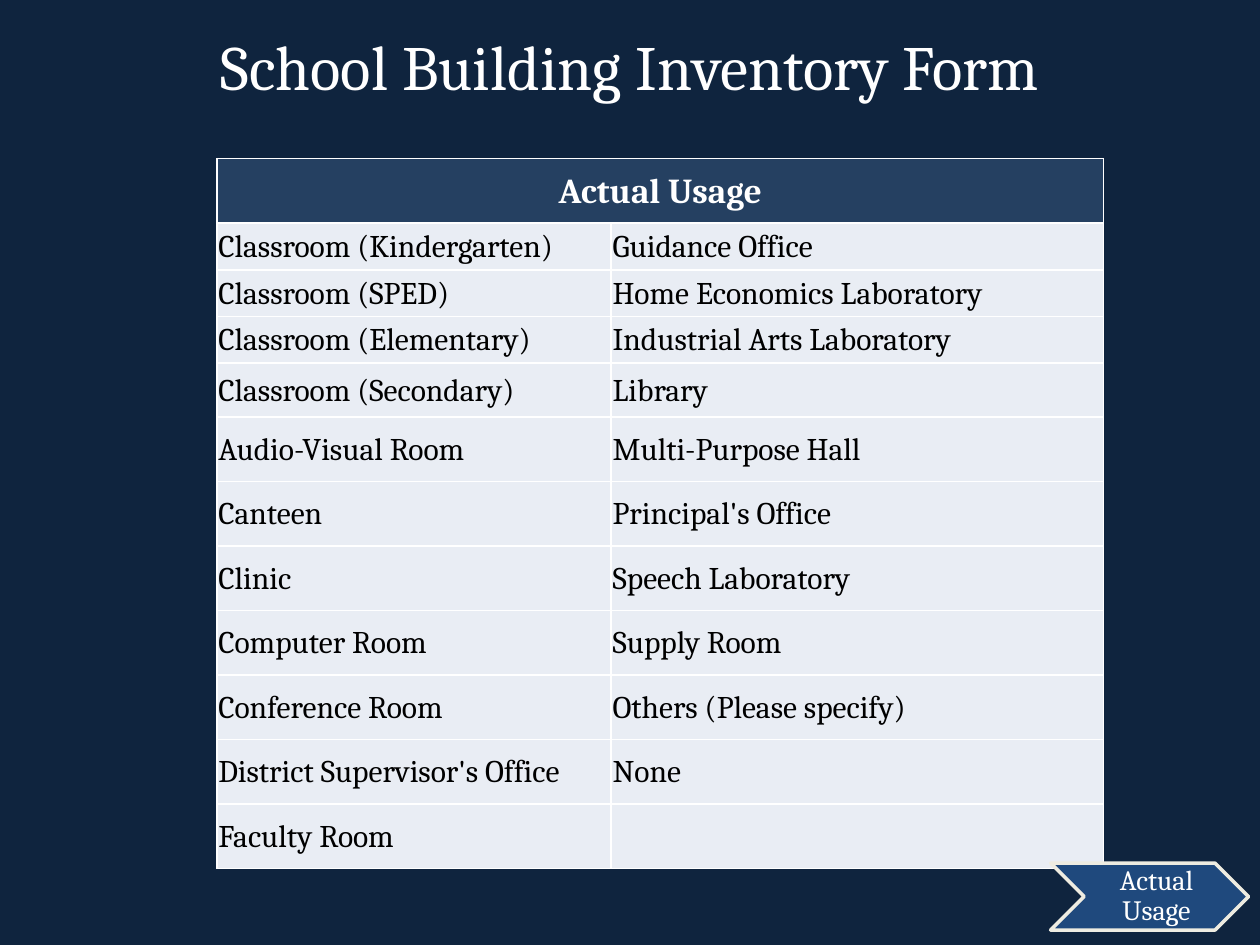
from lxml.etree import SubElement
from pptx import Presentation
from pptx.dml.color import RGBColor
from pptx.enum.shapes import MSO_SHAPE
from pptx.enum.text import MSO_ANCHOR, PP_ALIGN
from pptx.oxml.ns import qn
from pptx.util import Cm, Pt

NAVY, HEADER, ROW, WHITE, BLACK = "0F243E", "254061", "E9EDF4", "FFFFFF", "000000"
CHEVRON, CREAM = "1F497D", "EEECE1"

HEADING = {"size": Pt(36), "bold": False}
HEADER_TEXT = {"size": Pt(20), "bold": True}
ROW_TEXT = {"size": Pt(18), "bold": False}
TAG_TEXT = {"size": Pt(16), "bold": False}

USAGES = [
    ("Classroom (Kindergarten)", "Guidance Office"),
    ("Classroom (SPED)", "Home Economics Laboratory"),
    ("Classroom (Elementary)", "Industrial Arts Laboratory"),
    ("Classroom (Secondary)", "Library"),
    ("Audio-Visual Room", "Multi-Purpose Hall"),
    ("Canteen", "Principal's Office"),
    ("Clinic", "Speech Laboratory"),
    ("Computer Room", "Supply Room"),
    ("Conference Room", "Others (Please specify)"),
    ("District Supervisor's Office", "None"),
    ("Faculty Room", ""),
]
COLUMN_WIDTHS = [7.95, 9.93]
ROW_HEIGHTS = [1.3] + [0.94] * 3 + [1.09] + [1.3] * 7


def paint(color_format, color):
    color_format.rgb = RGBColor.from_string(color)


def fill_solid(target, color):
    target.fill.solid()
    paint(target.fill.fore_color, color)


def write(frame, text, style, color, align):
    paragraph = frame.paragraphs[0]
    paragraph.alignment = align
    span = paragraph.add_run()
    span.text = text
    span.font.name = "Cambria"
    for name, value in style.items():
        setattr(span.font, name, value)
    paint(span.font.color, color)
    return paragraph


def add_text(shapes, place, text, style, margins):
    box = shapes.add_textbox(*map(Cm, place))
    frame = box.text_frame
    frame.word_wrap = True
    frame.vertical_anchor = MSO_ANCHOR.MIDDLE
    for side, margin in margins.items():
        setattr(frame, f"margin_{side}", Cm(margin))
    return write(frame, text, style, WHITE, PP_ALIGN.CENTER)


def add_borders(cell, color):
    properties = cell._tc.get_or_add_tcPr()
    for index, side in enumerate(("lnL", "lnR", "lnT", "lnB")):
        line = properties.makeelement(qn(f"a:{side}"), {"w": str(Pt(1))})
        fill = SubElement(line, qn("a:solidFill"))
        SubElement(fill, qn("a:srgbClr"), val=color)
        properties.insert(index, line)


def format_cell(cell, text, style, color, fill, align):
    cell.vertical_anchor = MSO_ANCHOR.MIDDLE
    for side, margin in {"left": 0.03, "right": 0.03, "top": 0.03, "bottom": 0}.items():
        setattr(cell, f"margin_{side}", Cm(margin))
    fill_solid(cell, fill)
    add_borders(cell, WHITE)
    if text:
        write(cell.text_frame, text, style, color, align)


def add_usage_table(page):
    place = (4.37, 3.2, sum(COLUMN_WIDTHS), sum(ROW_HEIGHTS))
    frame = page.shapes.add_table(len(ROW_HEIGHTS), len(COLUMN_WIDTHS), *map(Cm, place))
    table = frame.table
    table.horz_banding = False
    for column, width in zip(table.columns, COLUMN_WIDTHS):
        column.width = Cm(width)
    for row, height in zip(table.rows, ROW_HEIGHTS):
        row.height = Cm(height)
    table.cell(0, 0).merge(table.cell(0, 1))
    for index, text in enumerate(("Actual Usage", "")):
        format_cell(table.cell(0, index), text, HEADER_TEXT, WHITE, HEADER, PP_ALIGN.CENTER)
    for row, usages in enumerate(USAGES, start=1):
        for column, usage in enumerate(usages):
            format_cell(table.cell(row, column), usage, ROW_TEXT, BLACK, ROW, PP_ALIGN.LEFT)


def add_tag(page):
    group = page.shapes.add_group_shape()
    chevron = group.shapes.add_shape(
        MSO_SHAPE.CHEVRON, Cm(21.18), Cm(17.4), Cm(3.99), Cm(1.35))
    chevron.shadow.inherit = False
    fill_solid(chevron, CHEVRON)
    paint(chevron.line.color, CREAM)
    chevron.line.width = Pt(2)
    margins = {"left": 0.25, "right": 0.1, "top": 0.1, "bottom": 0.1}
    paragraph = add_text(
        group.shapes, (21.69, 17.4, 3.1, 1.35), "Actual Usage", TAG_TEXT, margins)
    paragraph.line_spacing = 0.9


def main():
    deck = Presentation()
    deck.slide_width, deck.slide_height = Cm(25.4), Cm(19.05)
    page = deck.slides.add_slide(deck.slide_layouts[6])
    fill_solid(page.background, NAVY)
    add_usage_table(page)
    add_text(page.shapes, (0, 0, 25.4, 2.64), "School Building Inventory Form", HEADING, {})
    add_tag(page)
    deck.save("out.pptx")


if __name__ == "__main__":
    main()
